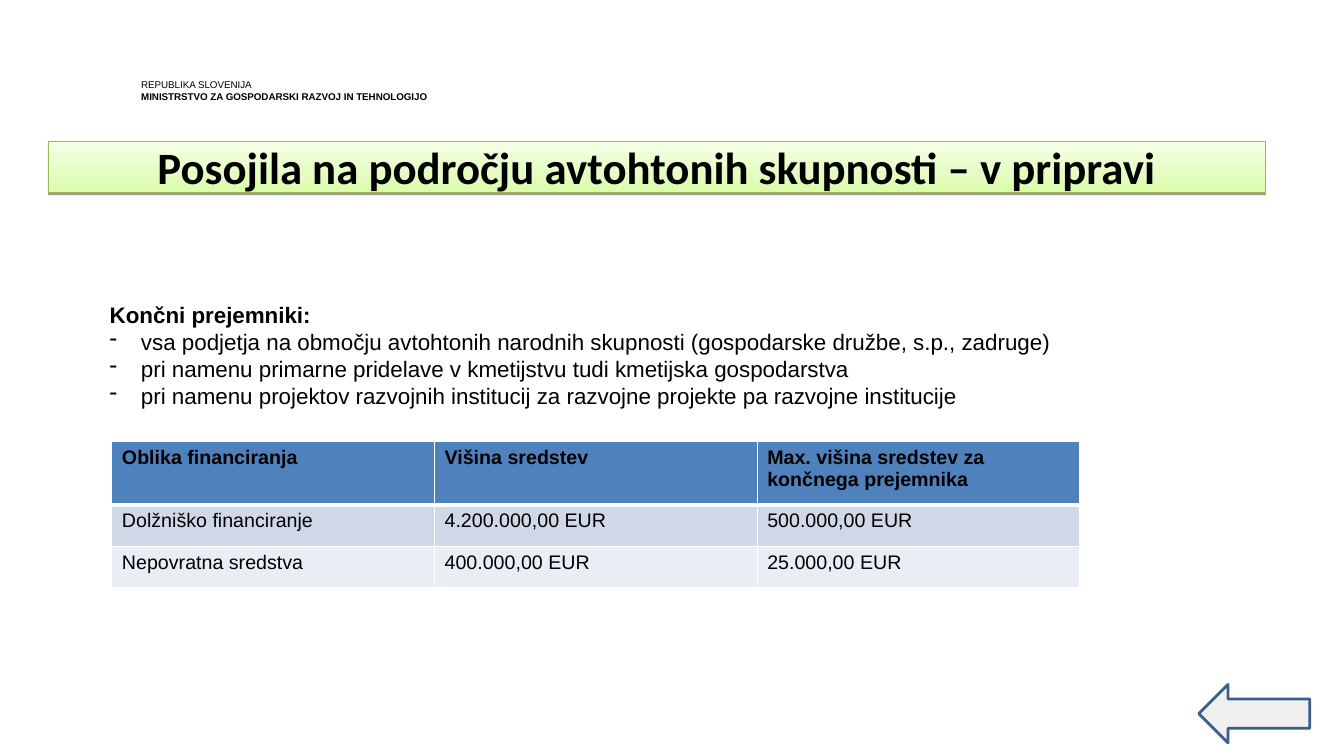
from copy import deepcopy

from pptx import Presentation
from pptx.dml.color import RGBColor
from pptx.enum.shapes import MSO_SHAPE
from pptx.enum.text import MSO_ANCHOR, MSO_AUTO_SIZE, PP_ALIGN
from pptx.oxml import parse_xml
from pptx.oxml.ns import nsdecls, qn
from pptx.util import Emu, Pt

PX = 9144


def px(n):
    return Emu(n * PX)


def rgb(value):
    return RGBColor.from_string(value)


class Deck:
    font = "Arial"
    title_font = "Calibri"
    ink = "000000"
    border = "FFFFFF"

    def __init__(self, width, height):
        self.prs = Presentation()
        self.prs.slide_width, self.prs.slide_height = px(width), px(height)

    def add_slide(self):
        self.s = self.prs.slides.add_slide(self.prs.slide_layouts[5])

    def run(self, p, text, size, bold=False, font=None):
        r = p.add_run()
        r.text = text
        r.font.size, r.font.bold = Pt(size), bold
        r.font.name = font or self.font
        r.font.color.rgb = rgb(self.ink)

    def title(self, text, box, size, stops, line):
        sp = self.s.shapes.title
        sp.left, sp.top, sp.width, sp.height = map(px, box)
        sp.fill.gradient()
        gs = sp.element.spPr.find(".//" + qn("a:gsLst"))
        gs.insert(1, deepcopy(gs[0]))
        for stop, (position, color) in zip(sp.fill.gradient_stops, stops):
            stop.position, stop.color.rgb = position, rgb(color)
        sp.fill.gradient_angle = 90
        sp.line.color.rgb, sp.line.width = rgb(line), Pt(0.75)
        sp.shadow.inherit = False
        sp.element.spPr.find(qn("a:effectLst")).append(parse_xml(
            f'<a:outerShdw {nsdecls("a")} blurRad="0" dist="20320" dir="5400000" rotWithShape="0">'
            '<a:srgbClr val="000000"><a:alpha val="38000"/></a:srgbClr></a:outerShdw>'))
        tf = sp.text_frame
        tf.word_wrap, tf.auto_size = True, MSO_AUTO_SIZE.NONE
        tf.vertical_anchor = MSO_ANCHOR.MIDDLE
        p = tf.paragraphs[0]
        p.alignment = PP_ALIGN.CENTER
        self.run(p, text, size, True, self.title_font)

    def text(self, lines, box, size, spacing=None, inset=None):
        tf = self.s.shapes.add_textbox(*map(px, box)).text_frame
        tf.word_wrap = True
        if inset is not None:
            tf.margin_left = tf.margin_top = tf.margin_right = tf.margin_bottom = px(inset)
        for i, (text, bold, bullet) in enumerate(lines):
            p = tf.add_paragraph() if i else tf.paragraphs[0]
            if spacing:
                p.line_spacing = Pt(spacing)
            if bullet:
                pPr = p._p.get_or_add_pPr()
                pPr.set("marL", str(px(31)))
                pPr.set("indent", str(-px(31)))
                pPr.append(parse_xml(f'<a:buChar {nsdecls("a")} char="{bullet}"/>'))
            self.run(p, text, size, bold)

    def arrow(self, box, fill, line):
        sp = self.s.shapes.add_shape(MSO_SHAPE.LEFT_ARROW, *map(px, box))
        sp.shadow.inherit = False
        sp.fill.solid()
        sp.fill.fore_color.rgb = rgb(fill)
        sp.line.color.rgb, sp.line.width = rgb(line), Pt(2)

    def borders(self, cell, top, bottom):
        tcPr = cell._tc.get_or_add_tcPr()
        for i, (side, width) in enumerate((("L", 1), ("R", 1), ("T", top), ("B", bottom))):
            tcPr.insert(i, parse_xml(
                f'<a:ln{side} {nsdecls("a")} w="{Pt(width)}"><a:solidFill>'
                f'<a:srgbClr val="{self.border}"/></a:solidFill></a:ln{side}>'))

    def table(self, rows, left, top, col_width, heights, fills, size):
        cols = len(rows[0])
        table = self.s.shapes.add_table(
            len(rows), cols, px(left), px(top), px(col_width * cols), px(sum(heights))).table
        table.horz_banding = False
        for col in table.columns:
            col.width = px(col_width)
        for i, texts in enumerate(rows):
            table.rows[i].height = px(heights[i])
            for j, text in enumerate(texts):
                cell = table.cell(i, j)
                cell.fill.solid()
                cell.fill.fore_color.rgb = rgb(fills[i])
                self.borders(cell, 3 if i == 1 else 1, 3 if i == 0 else 1)
                self.run(cell.text_frame.paragraphs[0], text, size, i == 0)


def main():
    deck = Deck(1333, 750)
    deck.add_slide()
    deck.text([
        ("REPUBLIKA SLOVENIJA", False, None),
        ("MINISTRSTVO ZA GOSPODARSKI RAZVOJ IN TEHNOLOGIJO", True, None),
    ], (140, 78, 439, 22), 7, spacing=8.4, inset=0)
    deck.title("Posojila na področju avtohtonih skupnosti – v pripravi", (48, 140, 1207, 51), 32,
               ((0, "DAFDA7"), (0.35, "E4FDC2"), (1, "F5FFE6")), "98B954")
    deck.arrow((1189, 679, 110, 58), "EFEFEF", "3A5F8C")
    deck.text([
        ("Končni prejemniki:", True, None),
        ("vsa podjetja na območju avtohtonih narodnih skupnosti (gospodarske družbe, s.p., zadruge)",
         False, "-"),
        ("pri namenu primarne pridelave v kmetijstvu tudi kmetijska gospodarstva", False, "-"),
        ("pri namenu projektov razvojnih institucij za razvojne projekte pa razvojne institucije",
         False, "-"),
    ], (99, 294, 1090, 141), 16)
    deck.table([
        ("Oblika financiranja", "Višina sredstev", "Max. višina sredstev za končnega prejemnika"),
        ("Dolžniško financiranje", "4.200.000,00 EUR", "500.000,00 EUR"),
        ("Nepovratna sredstva", "400.000,00 EUR", "25.000,00 EUR"),
    ], 111, 438, 320, (63, 41, 41), ("4F81BD", "D0D8E8", "E9EDF4"), 14)
    deck.prs.save("out.pptx")


if __name__ == "__main__":
    main()
